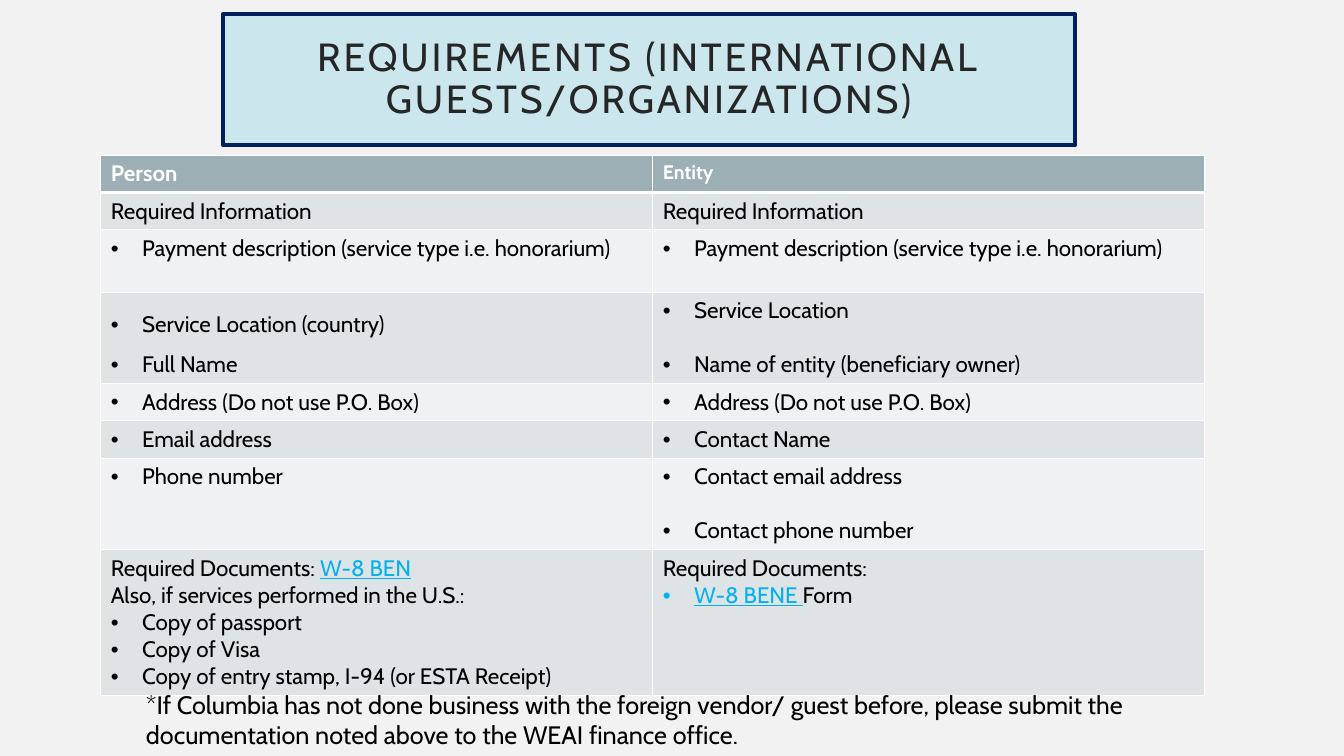
from lxml import etree
from pptx import Presentation
from pptx.dml.color import RGBColor
from pptx.enum.text import MSO_ANCHOR, MSO_AUTO_SIZE, PP_ALIGN
from pptx.oxml.ns import qn
from pptx.util import Inches, Pt

CENTER = PP_ALIGN.CENTER
MIDDLE = MSO_ANCHOR.MIDDLE
NO_AUTOFIT = MSO_AUTO_SIZE.NONE
FONT = "Cabin"
BLACK, WHITE, LINK_BLUE = "000000", "FFFFFF", "00B0F0"
HEADER_FILL, BAND_FILLS = "9BAFB5", ("DEE3E5", "EFF2F3")
BULLET_INDENT = 0.31
BLANK_LINE = 19.4


def color(hex_string):
    return RGBColor.from_string(hex_string)


def add_run(paragraph, text, size, hex_string=BLACK, bold=False):
    run = paragraph.add_run()
    run.text = text
    run.font.name = FONT
    run.font.size = Pt(size)
    run.font.bold = bold
    run.font.underline = hex_string == LINK_BLUE
    run.font.color.rgb = color(hex_string)
    return run


presentation = Presentation()
presentation.slide_width = Inches(13.33)
presentation.slide_height = Inches(7.5)
slide = presentation.slides.add_slide(presentation.slide_layouts[5])
slide.background.fill.solid()
slide.background.fill.fore_color.rgb = color("F2F2F2")

# Title
title = slide.shapes.title
title.left, title.top = Inches(2.21), Inches(0.14)
title.width, title.height = Inches(8.45), Inches(1.3)
title.fill.solid()
title.fill.fore_color.rgb = color("CBE7ED")
title.line.color.rgb = color("002060")
title.line.width = Pt(3)
frame = title.text_frame
frame.auto_size = NO_AUTOFIT
frame.word_wrap = True
frame.vertical_anchor = MIDDLE
frame.margin_left = frame.margin_right = Inches(0.3)
frame.margin_top = frame.margin_bottom = Inches(0.2)
paragraph = frame.paragraphs[0]
paragraph.alignment = CENTER
paragraph.line_spacing = 0.9
title_run = add_run(paragraph, "REQUIREMENTS (INTERNATIONAL GUESTS/ORGANIZATIONS)", 28, "262626")
title_run.font._element.set("spc", "200")

# Table content: a leading "•" marks a bullet, a tuple holds plain and link parts
PAYMENT = "•Payment description (service type i.e. honorarium)"
ADDRESS = "•Address (Do not use P.O. Box)"
rows = [
    (0.37, ["Person"], ["Entity"]),
    (0.37, ["Required Information"], ["Required Information"]),
    (0.62, [PAYMENT], [PAYMENT]),
    (0.9, ["•Service Location (country)", "•Full Name"],
     ["•Service Location", "•Name of entity (beneficiary owner)"]),
    (0.37, [ADDRESS], [ADDRESS]),
    (0.37, ["•Email address"], ["•Contact Name"]),
    (0.91, ["•Phone number"], ["•Contact email address", "•Contact phone number"]),
    (1.44, [("Required Documents: ", "W-8 BEN"),
            "Also, if services performed in the U.S.:",
            "•Copy of passport", "•Copy of Visa",
            "•Copy of entry stamp, I-94 (or ESTA Receipt)"],
     ["Required Documents:", ("•", "W-8 BENE ", "Form")]),
]
line_spacings = {(3, 0): 1.5}
spaced_cells = {(3, 1), (6, 1)}

# Requirements table
table = slide.shapes.add_table(len(rows), 2, Inches(1), Inches(1.54),
                               Inches(10.95), Inches(5.35)).table
for column in table.columns:
    column.width = Inches(5.475)
for row_index, (height, *cell_texts) in enumerate(rows):
    table.rows[row_index].height = Inches(height)
    is_header = row_index == 0
    for column_index, lines in enumerate(cell_texts):
        position = (row_index, column_index)
        cell = table.cell(*position)

        # Borders and fill
        properties = cell._tc.get_or_add_tcPr()
        for side in ("L", "R", "T", "B"):
            thick = position[0] == {"B": 0, "T": 1}.get(side)
            border = etree.SubElement(properties, qn(f"a:ln{side}"), w=str(Pt(3 if thick else 1)))
            border_fill = etree.SubElement(border, qn("a:solidFill"))
            etree.SubElement(border_fill, qn("a:srgbClr"), val=WHITE)
        cell.fill.solid()
        cell.fill.fore_color.rgb = color(HEADER_FILL if is_header else BAND_FILLS[(row_index + 1) % 2])

        # Text
        size = 14 if position == (0, 1) else 16
        for line_index, line in enumerate(lines):
            parts = (line,) if isinstance(line, str) else line
            frame = cell.text_frame
            paragraph = frame.paragraphs[0] if line_index == 0 else frame.add_paragraph()
            if parts[0].startswith("•"):
                indents = paragraph._p.get_or_add_pPr()
                indents.set("marL", str(Inches(BULLET_INDENT)))
                indents.set("indent", str(-Inches(BULLET_INDENT)))
                etree.SubElement(indents, qn("a:buFont"), typeface="Arial")
                etree.SubElement(indents, qn("a:buChar"), char="•")
            if position in line_spacings:
                paragraph.line_spacing = line_spacings[position]
            if position in spaced_cells and line_index > 0:
                paragraph.space_before = Pt(BLANK_LINE)
            for part_index, part in enumerate(parts):
                text = part.removeprefix("•")
                if text:
                    text_color = LINK_BLUE if part_index == 1 else BLACK
                    add_run(paragraph, text, size, WHITE if is_header else text_color, is_header)

# Footnote
footnote = slide.shapes.add_textbox(Inches(1.35), Inches(6.79), Inches(10.6), Inches(0.71))
footnote.text_frame.word_wrap = True
add_run(footnote.text_frame.paragraphs[0],
        "*If Columbia has not done business with the foreign vendor/ guest before, "
        "please submit the documentation noted above to the WEAI finance office.", 18)

presentation.save("out.pptx")
